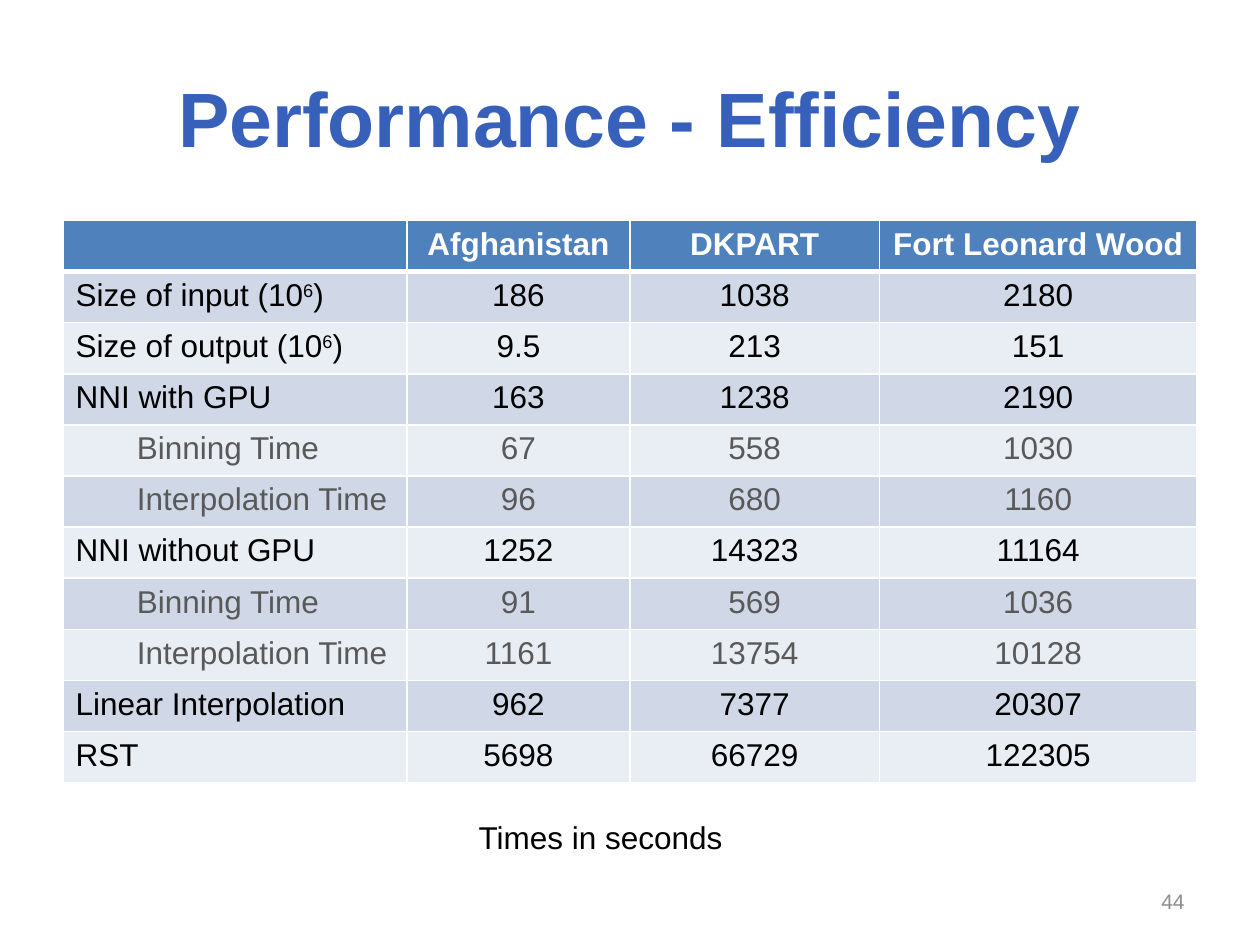
from lxml.etree import SubElement as Sub
from pptx import Presentation
from pptx.dml.color import RGBColor as Rgb
from pptx.enum.text import MSO_ANCHOR as Anchor, PP_ALIGN as Align
from pptx.oxml.ns import qn
from pptx.util import Pt

HUES = {"title": "3760BB", "head": "4F81BD", "odd": "D0D8E8", "even": "E9EDF4",
        "white": "FFFFFF", "black": "000000", "sub": "595959", "page": "8C8C8C"}
COLS = [196.56, 127.44, 142.56, 181.44]
ROW = 29.2
INDENT = 35

# Label and one value per data set; "^" marks a raised digit, ">" a sub-row
ROWS = [
    ("", "Afghanistan", "DKPART", "Fort Leonard Wood"),
    ("Size of input (10^6)", "186", "1038", "2180"),
    ("Size of output (10^6)", "9.5", "213", "151"),
    ("NNI with GPU", "163", "1238", "2190"),
    (">Binning Time", "67", "558", "1030"),
    (">Interpolation Time", "96", "680", "1160"),
    ("NNI without GPU", "1252", "14323", "11164"),
    (">Binning Time", "91", "569", "1036"),
    (">Interpolation Time", "1161", "13754", "10128"),
    ("Linear Interpolation", "962", "7377", "20307"),
    ("RST", "5698", "66729", "122305"),
]


def add_run(para, text, hue, **form):
    run = para.add_run()
    run.text = text
    for key, val in {"name": "Arial", "size": Pt(18), "bold": False, **form}.items():
        setattr(run.font, key, val)
    run.font.color.rgb = Rgb.from_string(HUES[hue])
    return run


def add_text(slide, box, text, hue, align, wrap=True, anchor=Anchor.MIDDLE, **form):
    frame = slide.shapes.add_textbox(*map(Pt, box)).text_frame
    for key, val in {"word_wrap": wrap, "vertical_anchor": anchor}.items():
        setattr(frame, key, val)
    para = frame.paragraphs[0]
    para.alignment = align
    add_run(para, text, hue, **form)


def set_edges(cell, top, base):
    props = cell._tc.get_or_add_tcPr()
    for side, width in {"L": 1, "R": 1, "T": top, "B": base}.items():
        line = Sub(props, qn(f"a:ln{side}"), w=str(Pt(width)))
        fill = Sub(line, qn("a:solidFill"))
        Sub(fill, qn("a:srgbClr"), val=HUES["white"])


def fill_cell(cell, text, hue, back, align, bold):
    cell.fill.solid()
    cell.fill.fore_color.rgb = Rgb.from_string(HUES[back])
    para = cell.text_frame.paragraphs[0]
    para.alignment = align
    if text.startswith(">"):
        para._p.get_or_add_pPr().set("marL", str(Pt(INDENT)))
    main, _, power = text.lstrip(">").partition("^")
    if main:
        add_run(para, main, hue, bold=bold)
    if power:
        raised = add_run(para, power[0], hue, bold=bold)
        raised._r.get_or_add_rPr().set("baseline", "30000")
        add_run(para, power[1:], hue, bold=bold)


def add_grid(slide):
    box = map(Pt, (36, 126, sum(COLS), ROW * len(ROWS)))
    table = slide.shapes.add_table(len(ROWS), len(COLS), *box).table
    for col, width in zip(table.columns, COLS):
        col.width = Pt(width)
    for r, texts in enumerate(ROWS):
        table.rows[r].height = Pt(ROW)
        head = r == 0
        back = "head" if head else "odd" if r % 2 else "even"
        hue = "white" if head else "sub" if texts[0].startswith(">") else "black"
        for c, text in enumerate(texts):
            cell = table.cell(r, c)
            # Heavy rule between the header and the body
            set_edges(cell, 3 if r == 1 else 1, 3 if head else 1)
            fill_cell(cell, text, hue, back, Align.CENTER if c else Align.LEFT, head)


def main():
    deck = Presentation()
    deck.slide_width, deck.slide_height = Pt(720), Pt(540)
    slide = deck.slides.add_slide(deck.slide_layouts[6])

    # Title
    add_text(slide, (36, 21.6, 648, 90), "Performance - Efficiency", "title",
             Align.CENTER, size=Pt(44), bold=True)
    # Timing table
    add_grid(slide)
    # Page number and unit note
    add_text(slide, (516, 500.4, 168, 28.8), "44", "page", Align.RIGHT, size=Pt(12))
    add_text(slide, (266.4, 463.7, 155.5, 28.8), "Times in seconds", "black",
             Align.LEFT, wrap=False, anchor=Anchor.TOP)

    deck.save("out.pptx")


if __name__ == "__main__":
    main()
